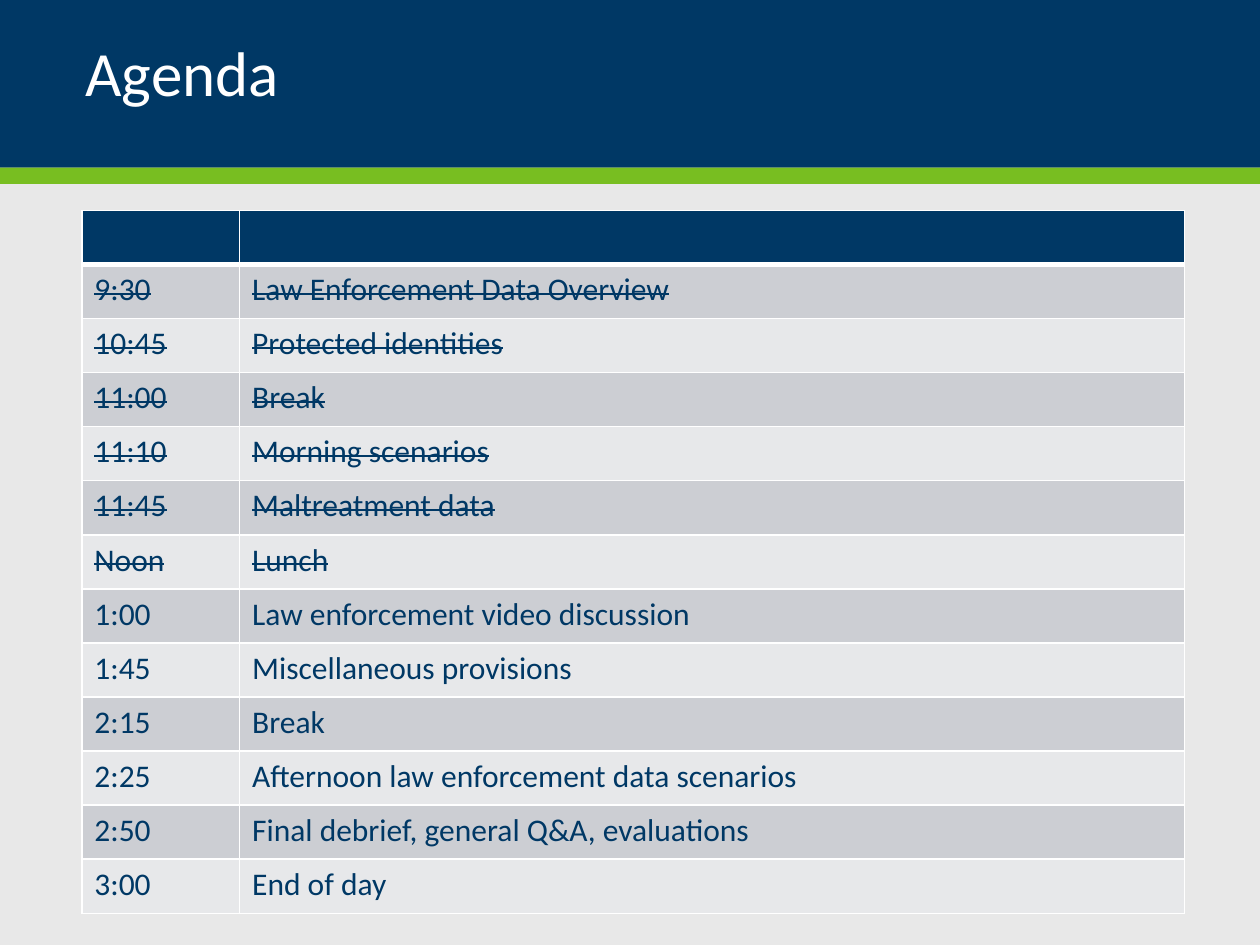
"""Build the training-day agenda slide with finished sessions struck through."""
from lxml.etree import SubElement
from pptx import Presentation
from pptx.dml.color import RGBColor
from pptx.enum.shapes import MSO_SHAPE as Shape
from pptx.enum.text import MSO_ANCHOR as Anchor, PP_ALIGN as Align
from pptx.oxml.ns import qn
from pptx.util import Cm, Pt

NAVY, GREEN, WHITE, PAGE = "003865", "78BE21", "FFFFFF", "E8E8E8"
ROW_FILLS = ["E7E8EA", "CCCED3"]
SESSIONS = [
    ("9:30", "Law Enforcement Data Overview", True),
    ("10:45", "Protected identities", True),
    ("11:00", "Break", True),
    ("11:10", "Morning scenarios", True),
    ("11:45", "Maltreatment data", True),
    ("Noon", "Lunch", True),
    ("1:00", "Law enforcement video discussion", False),
    ("1:45", "Miscellaneous provisions", False),
    ("2:15", "Break", False),
    ("2:25", "Afternoon law enforcement data scenarios", False),
    ("2:50", "Final debrief, general Q&A, evaluations", False),
    ("3:00", "End of day", False),
]


def paint(fill, color):
    fill.solid()
    fill.fore_color.rgb = RGBColor.from_string(color)


def write(frame, text, size=18, color=NAVY, strike=False, spacing=1.0):
    paragraph = frame.paragraphs[0]
    paragraph.alignment = Align.LEFT
    paragraph.line_spacing = spacing
    run = paragraph.add_run()
    run.text = text
    run.font.name = "Calibri"
    run.font.size = Pt(size)
    run.font.color.rgb = RGBColor.from_string(color)
    if strike:
        run._r.get_or_add_rPr().set("strike", "sngStrike")


prs = Presentation()
prs.slide_width, prs.slide_height = Cm(25.4), Cm(19.05)
slide = prs.slides.add_slide(prs.slide_layouts[5])
paint(slide.background.fill, PAGE)

title = slide.shapes.title
title.left, title.top, title.width, title.height = Cm(1.47), Cm(0.36), Cm(22.23), Cm(2.34)
title.text_frame.vertical_anchor = Anchor.MIDDLE
write(title.text_frame, "Agenda", size=36, color=WHITE, spacing=0.9)

for top, height, color in [(0, 3.38, NAVY), (3.38, 0.33, GREEN)]:
    band = slide.shapes.add_shape(Shape.RECTANGLE, 0, Cm(top), prs.slide_width, Cm(height))
    band.shadow.inherit = False
    band.line.fill.background()
    paint(band.fill, color)
    title.element.addprevious(band.element)

row_height = Cm(1.09)
row_count = len(SESSIONS) + 1
agenda = slide.shapes.add_table(
    row_count, 2, Cm(1.65), Cm(4.24), Cm(22.23), row_height * row_count
).table
agenda.columns[0].width, agenda.columns[1].width = Cm(3.18), Cm(19.05)

for index, (time, topic, done) in enumerate([("", "", False)] + SESSIONS):
    agenda.rows[index].height = row_height
    for cell, text in zip(agenda.rows[index].cells, (time, topic)):
        properties = cell._tc.get_or_add_tcPr()
        for side in ("lnL", "lnR", "lnT", "lnB"):
            heavy = (index, side) in [(0, "lnB"), (1, "lnT")]
            border = SubElement(properties, qn(f"a:{side}"), w=str(Pt(3 if heavy else 1)))
            SubElement(SubElement(border, qn("a:solidFill")), qn("a:srgbClr"), val=WHITE)
        paint(cell.fill, ROW_FILLS[index % 2] if index else NAVY)
        if text:
            write(cell.text_frame, text, strike=done)

prs.save("out.pptx")
